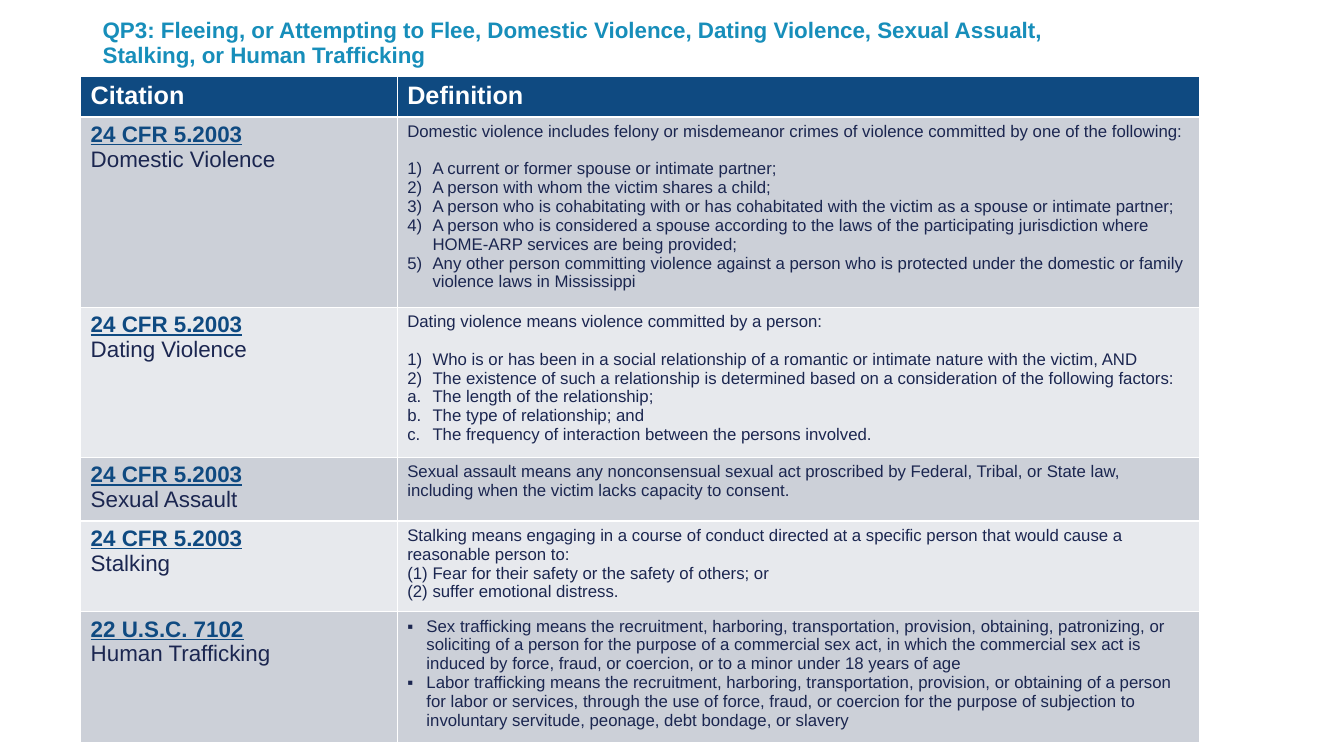
from lxml.etree import SubElement
from pptx import Presentation
from pptx.dml.color import RGBColor
from pptx.enum.text import MSO_ANCHOR
from pptx.oxml.ns import qn
from pptx.util import Inches, Pt

TEAL = RGBColor(0x17, 0x8E, 0xBA)
BLUE = RGBColor(0x0F, 0x4A, 0x81)
NAVY = RGBColor(0x1B, 0x26, 0x50)
WHITE = RGBColor(0xFF, 0xFF, 0xFF)
BANDS = RGBColor(0xCC, 0xD0, 0xD8), RGBColor(0xE7, 0xE9, 0xED)
FONT = "Arial"

TITLE_BOX = 0.92, 0.22, 10.24, 0.43
TABLE_BOX = 0.8, 0.76, 11.09, 6.24
COLUMN_WIDTHS = 3.14, 7.96
ROW_HEIGHTS = 0.4, 1.77, 1.41, 0.6, 0.85, 1.21
GAP = 13.5

# Numbering scheme or bullet character, and hanging indent in inches
PLAIN = None, 0
NUMBER = "arabicParenR", 0.25
LETTER = "alphaLcPeriod", 0.25
BRACKET = "arabicParenBoth", 0.25
SQUARE = "▪", 0.19

TITLE = ("QP3: Fleeing, or Attempting to Flee, Domestic Violence, Dating Violence, "
         "Sexual Assualt, Stalking, or Human Trafficking")

# Citation, term, and lists of the definition as (marker, space before, texts)
DEFINITIONS = [
    ("24 CFR 5.2003", "Domestic Violence", [
        (PLAIN, 0, ["Domestic violence includes felony or misdemeanor crimes of violence "
                    "committed by one of the following:"]),
        (NUMBER, GAP, [
            "A current or former spouse or intimate partner;",
            "A person with whom the victim shares a child;",
            "A person who is cohabitating with or has cohabitated with the victim as a "
            "spouse or intimate partner;",
            "A person who is considered a spouse according to the laws of the participating "
            "jurisdiction where HOME-ARP services are being provided;",
            "Any other person committing violence against a person who is protected under "
            "the domestic or family violence laws in Mississippi"]),
    ]),
    ("24 CFR 5.2003", "Dating Violence", [
        (PLAIN, 0, ["Dating violence means violence committed by a person:"]),
        (NUMBER, GAP, [
            "Who is or has been in a social relationship of a romantic or intimate nature "
            "with the victim, AND",
            "The existence of such a relationship is determined based on a consideration "
            "of the following factors:"]),
        (LETTER, 0, [
            "The length of the relationship;",
            "The type of relationship; and",
            "The frequency of interaction between the persons involved."]),
    ]),
    ("24 CFR 5.2003", "Sexual Assault", [
        (PLAIN, 0, ["Sexual assault means any nonconsensual sexual act proscribed by Federal, "
                    "Tribal, or State law, including when the victim lacks capacity to "
                    "consent."]),
    ]),
    ("24 CFR 5.2003", "Stalking", [
        (PLAIN, 0, ["Stalking means engaging in a course of conduct directed at a specific "
                    "person that would cause a reasonable person to:"]),
        (BRACKET, 0, ["Fear for their safety or the safety of others; or",
                      "suffer emotional distress."]),
    ]),
    ("22 U.S.C. 7102", "Human Trafficking", [
        (SQUARE, 0, [
            "Sex trafficking means the recruitment, harboring, transportation, provision, "
            "obtaining, patronizing, or soliciting of a person for the purpose of a "
            "commercial sex act, in which the commercial sex act is induced by force, "
            "fraud, or coercion, or to a minor under 18 years of age",
            "Labor trafficking means the recruitment, harboring, transportation, provision, "
            "or obtaining of a person for labor or services, through the use of force, "
            "fraud, or coercion for the purpose of subjection to involuntary servitude, "
            "peonage, debt bondage, or slavery"]),
    ]),
]


def add_run(paragraph, text, size, color, bold=False, underline=False):
    run = paragraph.add_run()
    run.text = text
    font = run.font
    font.name, font.size = FONT, Pt(size)
    font.bold, font.underline = bold, underline
    font.color.rgb = color


def next_paragraph(frame):
    """Return the first paragraph while it is empty, otherwise a new one."""
    first = frame.paragraphs[0]
    return frame.add_paragraph() if first.runs else first


def set_marker(paragraph, marker):
    symbol, indent = marker
    if symbol is None:
        return
    properties = paragraph._p.get_or_add_pPr()
    properties.set("marL", str(Inches(indent)))
    properties.set("indent", str(-Inches(indent)))
    if marker == SQUARE:
        SubElement(properties, qn("a:buFont"), typeface=FONT)
        SubElement(properties, qn("a:buChar"), char=symbol)
    else:
        SubElement(properties, qn("a:buAutoNum"), type=symbol)


def add_title(slide, box):
    frame = slide.shapes.add_textbox(*map(Inches, box)).text_frame
    frame.word_wrap = True
    frame.vertical_anchor = MSO_ANCHOR.MIDDLE
    paragraph = frame.paragraphs[0]
    paragraph.line_spacing = 0.9
    add_run(paragraph, TITLE, 16, TEAL, bold=True)


def fill_cell(cell, color):
    cell.fill.solid()
    cell.fill.fore_color.rgb = color
    return cell.text_frame


def write_citation(frame, citation, term):
    add_run(next_paragraph(frame), citation, 16, BLUE, bold=True, underline=True)
    add_run(next_paragraph(frame), term, 16, NAVY)


def write_definition(frame, lists):
    for marker, space_before, texts in lists:
        for index, text in enumerate(texts):
            paragraph = next_paragraph(frame)
            set_marker(paragraph, marker)
            if space_before and index == 0:
                paragraph.space_before = Pt(space_before)
            add_run(paragraph, text, 12, NAVY)


def add_definition_table(slide, box):
    table = slide.shapes.add_table(len(ROW_HEIGHTS), len(COLUMN_WIDTHS),
                                   *map(Inches, box)).table
    for column, width in zip(table.columns, COLUMN_WIDTHS):
        column.width = Inches(width)
    for row, height in zip(table.rows, ROW_HEIGHTS):
        row.height = Inches(height)
    for column, heading in enumerate(("Citation", "Definition")):
        frame = fill_cell(table.cell(0, column), BLUE)
        add_run(frame.paragraphs[0], heading, 18, WHITE, bold=True)
    for index, (citation, term, lists) in enumerate(DEFINITIONS):
        left, right = (fill_cell(table.cell(index + 1, column), BANDS[index % 2])
                       for column in range(2))
        write_citation(left, citation, term)
        write_definition(right, lists)


def main():
    presentation = Presentation()
    presentation.slide_width, presentation.slide_height = Inches(13.33), Inches(7.5)
    slide = presentation.slides.add_slide(presentation.slide_layouts[6])
    add_title(slide, TITLE_BOX)
    add_definition_table(slide, TABLE_BOX)
    presentation.save("out.pptx")


if __name__ == "__main__":
    main()
